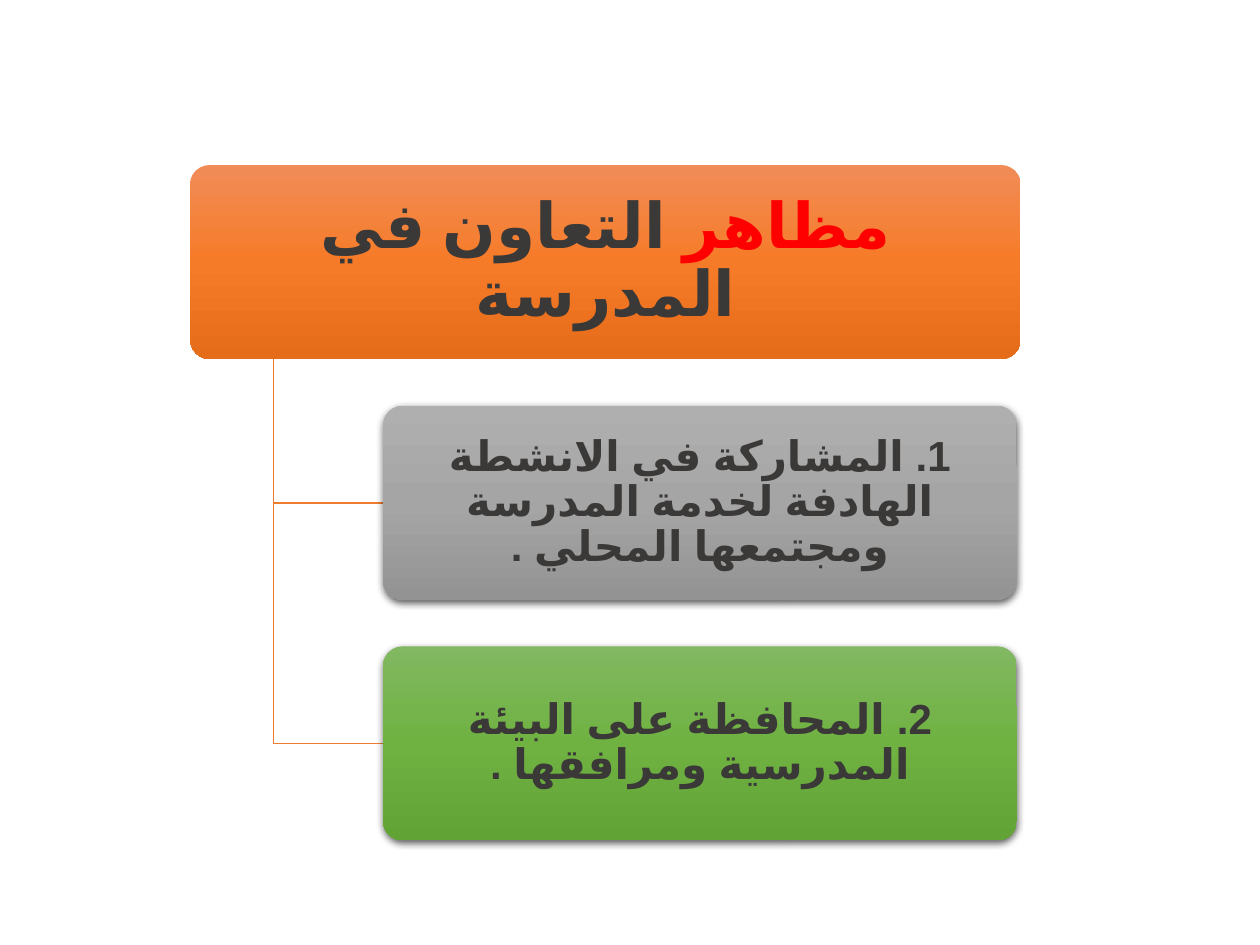
import copy
from typing import NamedTuple

import pptx
import pptx.dml.color
import pptx.enum.lang
import pptx.enum.shapes
import pptx.enum.text
import pptx.oxml
import pptx.oxml.ns
import pptx.util
from lxml import etree
from pptx.dml.color import RGBColor
from pptx.util import Inches

RED = RGBColor(0xFF, 0x00, 0x00)
DARK = RGBColor(0x3B, 0x38, 0x38)
ORANGE_LINE = RGBColor(0xED, 0x7D, 0x31)
ORANGES = (RGBColor(0xF1, 0x8C, 0x57), RGBColor(0xF6, 0x7B, 0x28), RGBColor(0xE5, 0x6C, 0x19))
GREYS = (RGBColor(0xAF, 0xAF, 0xAF), RGBColor(0xA5, 0xA5, 0xA5), RGBColor(0x93, 0x93, 0x93))
GREENS = (RGBColor(0x81, 0xB8, 0x61), RGBColor(0x6F, 0xB2, 0x42), RGBColor(0x62, 0xA3, 0x36))

TOP = 1.31
PITCH = 1.91
HEIGHT = 1.54
TRUNK_X = 2.17
CHILD_LEFT = 3.04

SHADOW = (
    f'<a:outerShdw {pptx.oxml.ns.nsdecls("a")} blurRad="57150" dist="19050" dir="5400000" '
    'algn="ctr" rotWithShape="0"><a:srgbClr val="000000"><a:alpha val="63000"/></a:srgbClr>'
    "</a:outerShdw>"
)


class Span(NamedTuple):
    text: str
    color: RGBColor = DARK


class Card(NamedTuple):
    left: float
    width: float
    colors: tuple[RGBColor, RGBColor, RGBColor]
    spans: tuple[Span, ...]
    size: int
    side_inset: float
    end_inset: float
    shadow: bool


def child(colors: tuple[RGBColor, RGBColor, RGBColor], text: str) -> Card:
    return Card(CHILD_LEFT, 5.03, colors, (Span(text),), 24, 0.05, 0.03, True)


CARDS = (
    Card(1.51, 6.59, ORANGES, (Span("مظاهر", RED), Span(" التعاون في المدرسة")),
         36, 0.07, 0.05, False),
    child(GREYS, "1. المشاركة في الانشطة الهادفة لخدمة المدرسة ومجتمعها المحلي ."),
    child(GREENS, "2. المحافظة على البيئة المدرسية ومرافقها ."),
)


def apply(target, values: dict) -> None:
    for name, value in values.items():
        setattr(target, name, value)


def fill_gradient(box, colors: tuple[RGBColor, ...]) -> None:
    """Fill from top to bottom with evenly spaced colours."""
    box.fill.gradient()
    box.fill.gradient_angle = 270
    stop_list = box.element.spPr.find(".//" + pptx.oxml.ns.qn("a:gsLst"))
    stop_list.insert(1, copy.deepcopy(stop_list[0]))
    for index, (stop, color) in enumerate(zip(box.fill.gradient_stops, colors)):
        stop.position = index / (len(colors) - 1)
        stop.color.rgb = color


def write_text(box, card: Card) -> None:
    side, end = Inches(card.side_inset), Inches(card.end_inset)
    apply(box.text_frame, {
        "word_wrap": True,
        "vertical_anchor": pptx.enum.text.MSO_ANCHOR.MIDDLE,
        "margin_left": side, "margin_right": side,
        "margin_top": end, "margin_bottom": end,
    })
    para = box.text_frame.paragraphs[0]
    apply(para, {
        "alignment": pptx.enum.text.PP_ALIGN.CENTER,
        "line_spacing": 0.9,
        "space_after": pptx.util.Pt(card.size * 0.35),
    })
    para._p.get_or_add_pPr().set("rtl", "1")
    for span in card.spans:
        run = para.add_run()
        run.text = span.text
        apply(run.font, {
            "name": "Calibri",
            "size": pptx.util.Pt(card.size),
            "bold": True,
            "language_id": pptx.enum.lang.MSO_LANGUAGE_ID.ARABIC,
        })
        run.font.color.rgb = span.color
        arabic_font = etree.SubElement(run._r.get_or_add_rPr(), pptx.oxml.ns.qn("a:cs"))
        arabic_font.set("typeface", "Arial")


def draw_card(page, card: Card, top: float) -> None:
    box = page.shapes.add_shape(
        pptx.enum.shapes.MSO_SHAPE.ROUNDED_RECTANGLE,
        Inches(card.left), Inches(top), Inches(card.width), Inches(HEIGHT))
    box.adjustments[0] = 0.1
    fill_gradient(box, card.colors)
    box.line.fill.background()
    box.shadow.inherit = False
    if card.shadow:
        effects = box.element.spPr.find(pptx.oxml.ns.qn("a:effectLst"))
        effects.append(pptx.oxml.parse_xml(SHADOW))
    write_text(box, card)


def draw_branch(page, card_top: float) -> None:
    """Draw the elbow from the heading down to the middle of a card's left side."""
    middle = Inches(card_top + HEIGHT / 2)
    builder = page.shapes.build_freeform(Inches(TRUNK_X), Inches(TOP + HEIGHT))
    builder.add_line_segments(
        [(Inches(TRUNK_X), middle), (Inches(CHILD_LEFT), middle)], close=False)
    branch = builder.convert_to_shape()
    branch.fill.background()
    branch.line.color.rgb = ORANGE_LINE
    branch.line.width = pptx.util.Pt(1)
    branch.shadow.inherit = False


def main() -> None:
    deck = pptx.Presentation()
    apply(deck, {"slide_width": Inches(10), "slide_height": Inches(7.5)})
    page = deck.slides.add_slide(deck.slide_layouts[6])
    tops = [TOP + row * PITCH for row in range(len(CARDS))]
    for top in tops[1:]:
        draw_branch(page, top)
    for card, top in zip(CARDS, tops):
        draw_card(page, card, top)
    deck.save("out.pptx")


if __name__ == "__main__":
    main()
